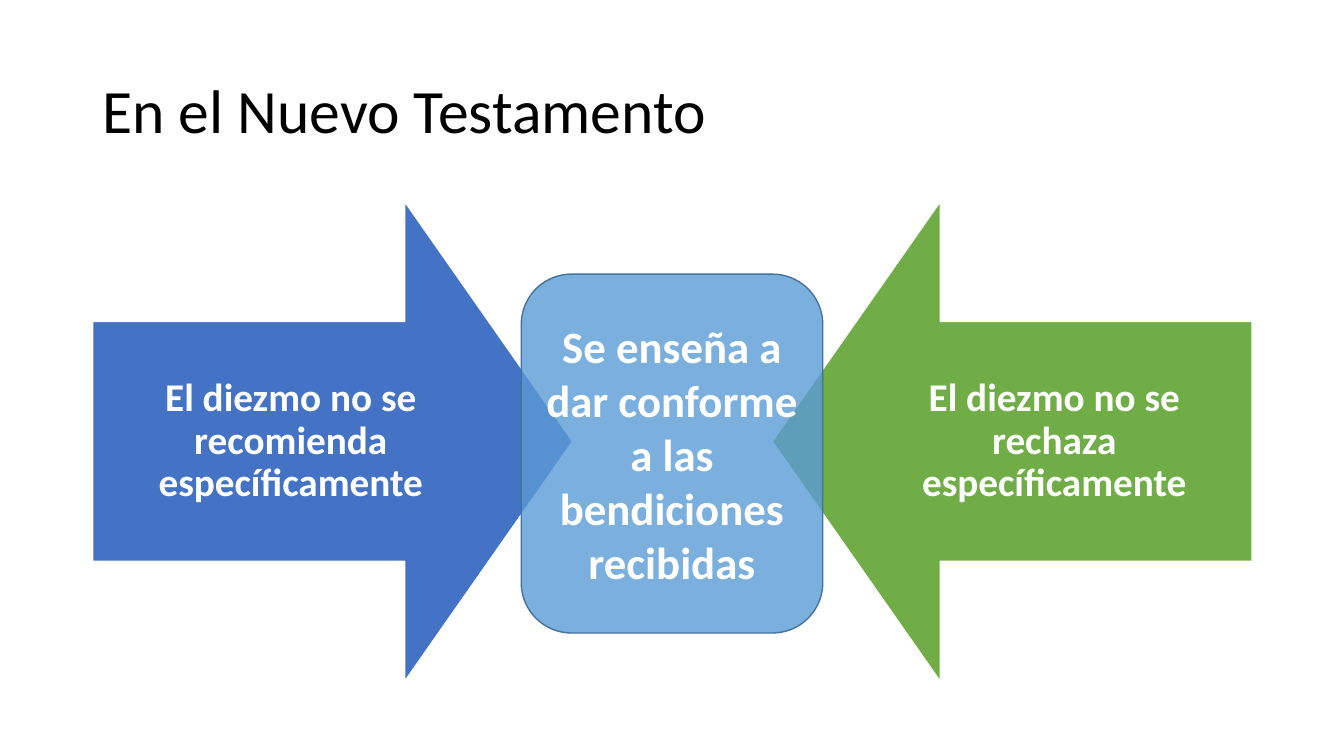
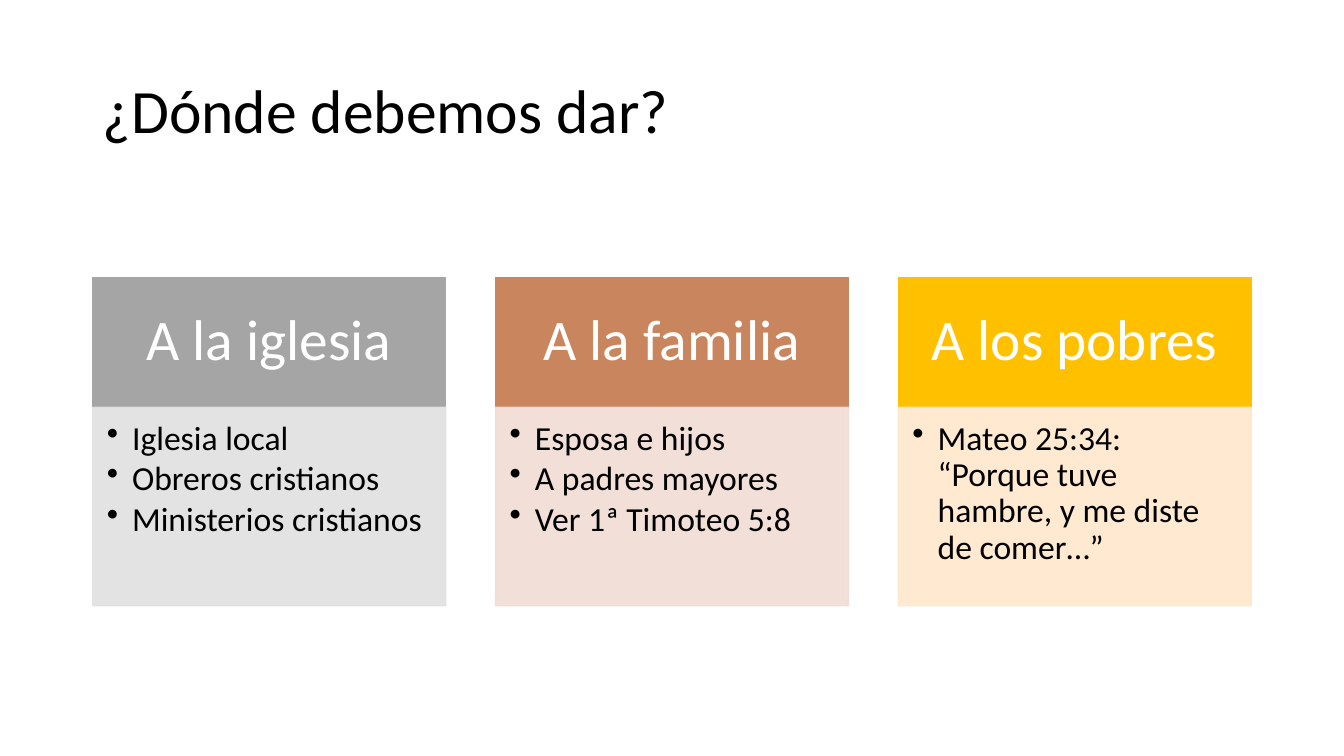
from lxml import etree
from pptx import Presentation
from pptx.dml.color import RGBColor
from pptx.enum import shapes, text
from pptx.oxml.ns import qn
from pptx.util import Inches, Pt

# Content
ARROWS_TITLE = "En el Nuevo Testamento"
ARROWS = [
    ("El diezmo no se recomienda específicamente", "RIGHT_ARROW", 0.92, "blue"),
    ("El diezmo no se rechaza específicamente", "LEFT_ARROW", 7.66, "green"),
]
CONCLUSION = "Se enseña a dar conforme a las bendiciones recibidas"

COLUMNS_TITLE = "¿Dónde debemos dar?"
COLUMNS = [
    ("A la iglesia", "gray", "pale gray",
     ["Iglesia local", "Obreros cristianos", "Ministerios cristianos"]),
    ("A la familia", "clay", "pale clay",
     ["Esposa e hijos", "A padres mayores", "Ver 1ª Timoteo 5:8"]),
    ("A los pobres", "gold", "pale gold",
     ["Mateo 25:34: “Porque tuve hambre, y me diste de comer…”"]),
]

# Shared style
FONT = "Calibri"
COLORS = {
    "black": "000000", "white": "FFFFFF",
    "blue": "4472C4", "green": "70AD47", "sky": "5B9BD5", "sky edge": "43739E",
    "gray": "A5A5A5", "pale gray": "E1E1E1",
    "clay": "C9865E", "pale clay": "F0DCD4",
    "gold": "FFC000", "pale gold": "FFE7CB",
}
LEFT = 0.92
ARROW_TOP, ARROW_SIZE = 2, 4.76
COLUMN_TOP, COLUMN_WIDTH, COLUMN_STEP = 2.75, 3.5, 3.995
HEADING_HEIGHT, BODY_HEIGHT = 1.29, 1.97
BULLET_INDENT = Inches(0.25)


def color(name):
    return RGBColor.from_string(COLORS[name])


def set_alpha(fill, percent):
    """Make every solid colour below the given XML element translucent."""
    for value in fill.iter(qn("a:srgbClr")):
        etree.SubElement(value, qn("a:alpha"), val=str(percent * 1000))


def write(shape, lines, size, ink="white", bold=False, spacing=1.0, after=0,
          align=text.PP_ALIGN.CENTER, anchor=text.MSO_ANCHOR.MIDDLE,
          insets=(0.1, 0.05, 0.1, 0.05)):
    frame = shape.text_frame
    frame.word_wrap = True
    frame.vertical_anchor = anchor
    (frame.margin_left, frame.margin_top,
     frame.margin_right, frame.margin_bottom) = map(Inches, insets)
    frame.text = "\n".join(lines)
    for para in frame.paragraphs:
        para.alignment = align
        para.line_spacing = spacing
        para.space_after = Pt(after)
        para.font.name = FONT
        para.font.size = Pt(size)
        para.font.bold = bold
        para.font.color.rgb = color(ink)
    return frame.paragraphs


def add_bullets(paragraphs):
    for para in paragraphs:
        props = para._p.get_or_add_pPr()
        props.set("marL", str(BULLET_INDENT))
        props.set("indent", str(-BULLET_INDENT))
        bullet = etree.Element(qn("a:buChar"), char="•")
        # The bullet belongs before the default run properties
        props.find(qn("a:defRPr")).addprevious(bullet)


def add_block(page, kind, at, fill, line=None, alpha=None):
    block = page.shapes.add_shape(kind, *map(Inches, at))
    block.shadow.inherit = False
    block.fill.solid()
    block.fill.fore_color.rgb = color(fill)
    if alpha:
        set_alpha(block._element.spPr, alpha)
    block.line.color.rgb = color(line or fill)
    block.line.width = Pt(1)
    return block


def add_page(deck, title):
    page = deck.slides.add_slide(deck.slide_layouts[6])
    box = page.shapes.add_textbox(*map(Inches, (LEFT, 0.4, 11.5, 1.45)))
    write(box, [title], 44, "black", spacing=0.9, align=text.PP_ALIGN.LEFT)
    return page


def build_arrows(deck):
    page = add_page(deck, ARROWS_TITLE)
    for label, kind, left, fill in ARROWS:
        arrow = add_block(page, shapes.MSO_SHAPE[kind],
                          (left, ARROW_TOP, ARROW_SIZE, ARROW_SIZE), fill, "white")
        arrow.adjustments[0] = 0.5
        arrow.adjustments[1] = 0.35
        write(arrow, [label], 28, bold=True, spacing=0.9, insets=[0.22] * 4)

    # Conclusion over both arrow tips
    center = add_block(page, shapes.MSO_SHAPE.ROUNDED_RECTANGLE,
                       (5.17, 2.72, 2.99, 3.56), "sky", "sky edge", 80)
    write(center, [CONCLUSION], 32, bold=True, insets=[0.05] * 4)


def build_columns(deck):
    page = add_page(deck, COLUMNS_TITLE)
    rectangle = shapes.MSO_SHAPE.RECTANGLE
    for index, (heading, strong, pale, items) in enumerate(COLUMNS):
        left = LEFT + index * COLUMN_STEP
        head = add_block(page, rectangle,
                         (left, COLUMN_TOP, COLUMN_WIDTH, HEADING_HEIGHT), strong)
        write(head, [heading], 41, spacing=0.9, insets=[0.18] * 4)

        body = add_block(page, rectangle,
                         (left, COLUMN_TOP + HEADING_HEIGHT, COLUMN_WIDTH, BODY_HEIGHT),
                         pale, alpha=90)
        set_alpha(body.line._ln, 90)
        add_bullets(write(body, items, 24, "black", spacing=0.9, after=3,
                          align=text.PP_ALIGN.LEFT, anchor=text.MSO_ANCHOR.TOP,
                          insets=(0.14, 0.14, 0.19, 0.21)))


def main():
    deck = Presentation()
    deck.slide_width, deck.slide_height = Inches(13.33), Inches(7.5)
    build_arrows(deck)
    build_columns(deck)
    deck.save("out.pptx")


if __name__ == "__main__":
    main()
